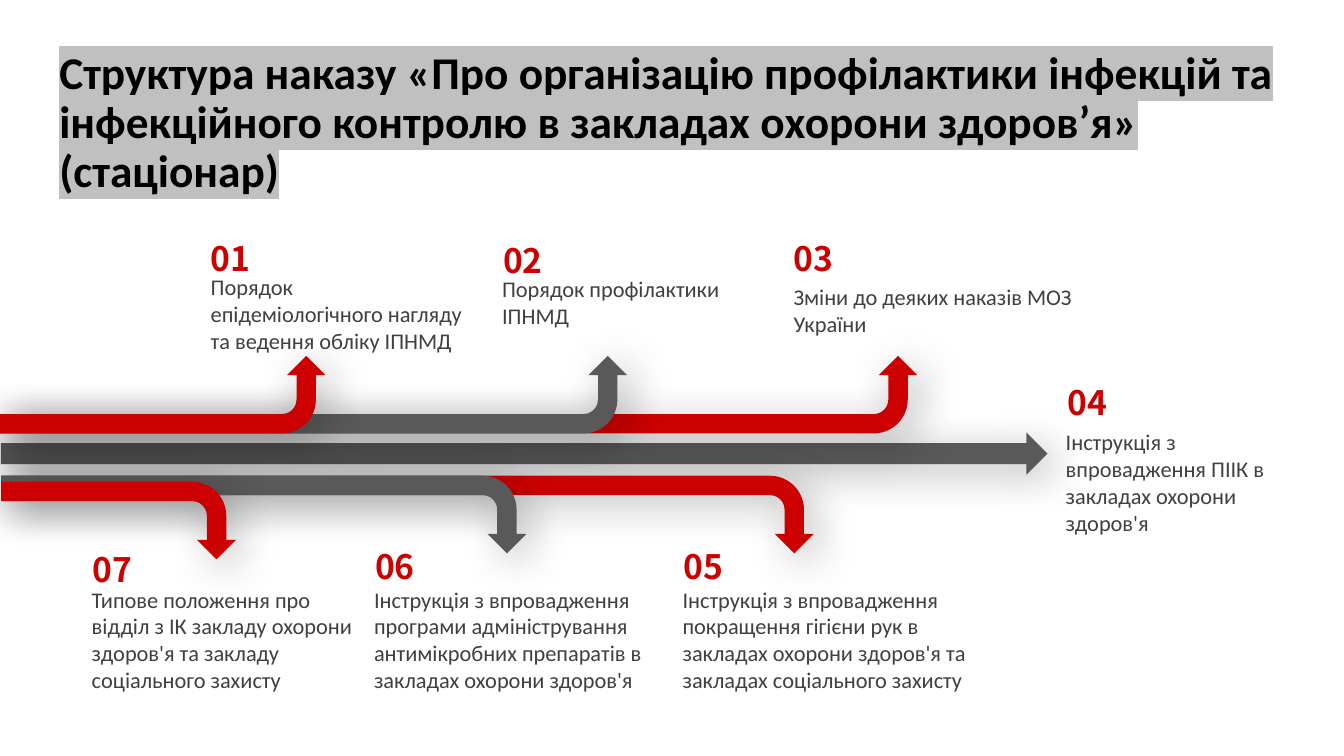
from lxml import etree
from pptx import Presentation
from pptx import util as u
from pptx.dml.color import RGBColor
from pptx.enum import shapes, text
from pptx.oxml.ns import qn

PX = 9144  # 100 px to the inch
COLORS = {"red": "CC0000", "gray": "595959", "body": "404040",
          "title": "000000", "highlight": "C0C0C0", "shadow": "000000"}
ARROW_DEPTH = 77


class Board:
    heading_font = "Calibri"
    number_font = "Noto Sans CJK SC"

    def __init__(self, deck):
        self.slide = deck.slides.add_slide(deck.slide_layouts[6])

    def label(self, box, words, size, color, font, bold=False, inset=(7, 4)):
        frame = self.slide.shapes.add_textbox(*(v * PX for v in box)).text_frame
        frame.word_wrap = True
        frame.margin_left = frame.margin_right = inset[0] * PX
        frame.margin_top = frame.margin_bottom = inset[1] * PX
        frame.text = words
        run = frame.paragraphs[0].runs[0]
        run.font.size = u.Pt(size)
        run.font.bold = bold
        run.font.name = font
        run.font.color.rgb = RGBColor.from_string(COLORS[color])
        return frame

    def title(self, box, words):
        frame = self.label(box, words, 32.4, "title", self.heading_font, True, (10, 5))
        frame.vertical_anchor = text.MSO_ANCHOR.MIDDLE
        paragraph = frame.paragraphs[0]
        paragraph.line_spacing = 0.9
        highlight = etree.Element(qn("a:highlight"))
        etree.SubElement(highlight, qn("a:srgbClr"), val=COLORS["highlight"])
        run_style = paragraph.runs[0].font._element
        run_style.find(qn("a:solidFill")).addnext(highlight)

    def item(self, number, number_box, body_box, words):
        self.label(number_box, number, 24, "red", self.number_font, True)
        self.label(body_box, words, 16, "body", self.heading_font)

    def arrow(self, kind, box, color):
        arrow = self.slide.shapes.add_shape(kind, *(int(v * PX) for v in box))
        arrow.fill.solid()
        arrow.fill.fore_color.rgb = RGBColor.from_string(COLORS[color])
        arrow.line.fill.background()
        arrow.shadow.inherit = False
        self.soft_shadow(arrow)
        return arrow

    def bent_arrow(self, left, top, length, color, up):
        # The preset stands upright, so its frame is turned about its centre
        shift = (length - ARROW_DEPTH) / 2
        frame = (left + shift, top - shift, ARROW_DEPTH, length)
        arrow = self.arrow(shapes.MSO_SHAPE.BENT_ARROW, frame, color)
        arrow.rotation = 90
        if up:
            arrow._element.spPr.find(qn("a:xfrm")).set("flipH", "1")

    def soft_shadow(self, arrow):
        effects = arrow._element.spPr.find(qn("a:effectLst"))
        shadow = etree.SubElement(
            effects, qn("a:outerShdw"), blurRad=str(u.Pt(30)), dist=str(u.Pt(8)),
            dir=str(45 * 60000), algn="tl", rotWithShape="0")
        tint = etree.SubElement(shadow, qn("a:srgbClr"), val=COLORS["shadow"])
        etree.SubElement(tint, qn("a:alpha"), val="30000")


# left, top, length, colour, pointing up; from back to front
BRANCHES = [
    (0, 353, 910, "red", True),
    (1, 472, 806, "red", False),
    (0, 353, 622, "gray", True),
    (-2, 353, 325, "red", True),
    (1, 472, 521, "gray", False),
    (1, 478, 233, "red", False),
]

# number, box of the number, box of the wording, wording
ANNEXES = [
    ("01", (202, 232, 141, 48), (202, 267, 267, 88),
     "Порядок епідеміологічного нагляду та ведення обліку ІПНМД"),
    ("02", (492, 234, 141, 48), (491, 269, 268, 61),
     "Порядок профілактики ІПНМД"),
    ("03", (780, 232, 141, 48), (780, 277, 332, 61),
     "Зміни до деяких наказів МОЗ України"),
    ("04", (1052, 375, 281, 48), (1050, 421, 265, 115),
     "Інструкція з впровадження ПІІК в закладах охорони здоров'я"),
    ("05", (671, 538, 141, 48), (670, 577, 309, 115),
     "Інструкція з впровадження покращення гігієни рук в закладах "
     "охорони здоров'я та закладах соціального захисту"),
    ("06", (365, 538, 141, 48), (364, 577, 286, 115),
     "Інструкція з впровадження програми адміністрування "
     "антимікробних препаратів в закладах охорони здоров'я"),
    ("07", (85, 541, 150, 48), (84, 577, 286, 115),
     "Типове положення про відділ з ІК закладу охорони здоров'я "
     "та закладу соціального захисту"),
]


def main():
    deck = Presentation()
    deck.slide_width = u.Inches(13.33)
    deck.slide_height = u.Inches(7.5)
    board = Board(deck)

    # Heading
    board.title((49, 55, 1238, 135),
                "Структура наказу «Про організацію профілактики інфекцій та "
                "інфекційного контролю в закладах охорони здоров’я» (стаціонар)")

    # Main arrow and its branches
    board.arrow(shapes.MSO_SHAPE.RIGHT_ARROW, (1, 429, 1038, 42), "gray")
    for branch in BRANCHES:
        board.bent_arrow(*branch)

    # Numbered annexes of the order
    for annex in ANNEXES:
        board.item(*annex)

    deck.save("out.pptx")


if __name__ == "__main__":
    main()
